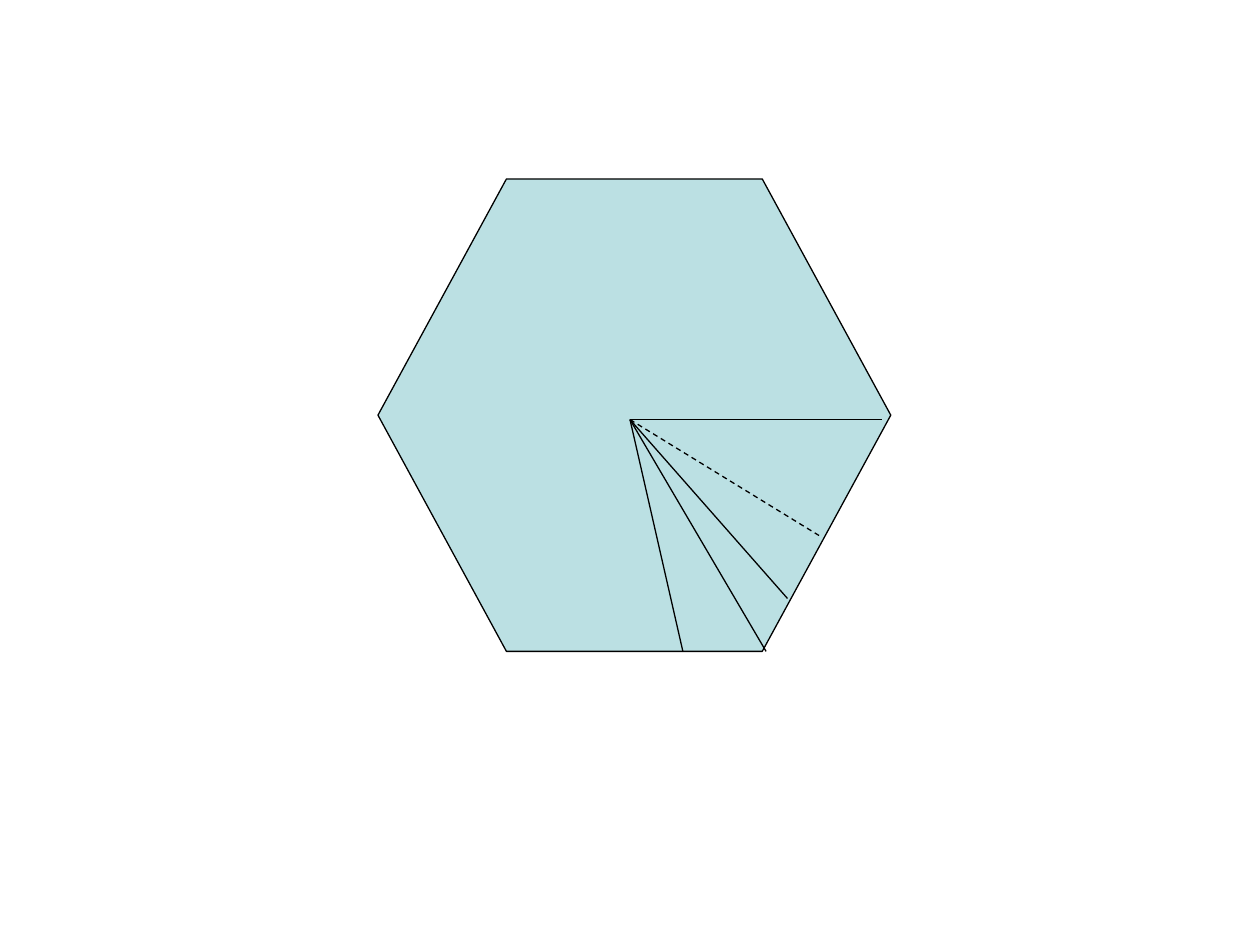
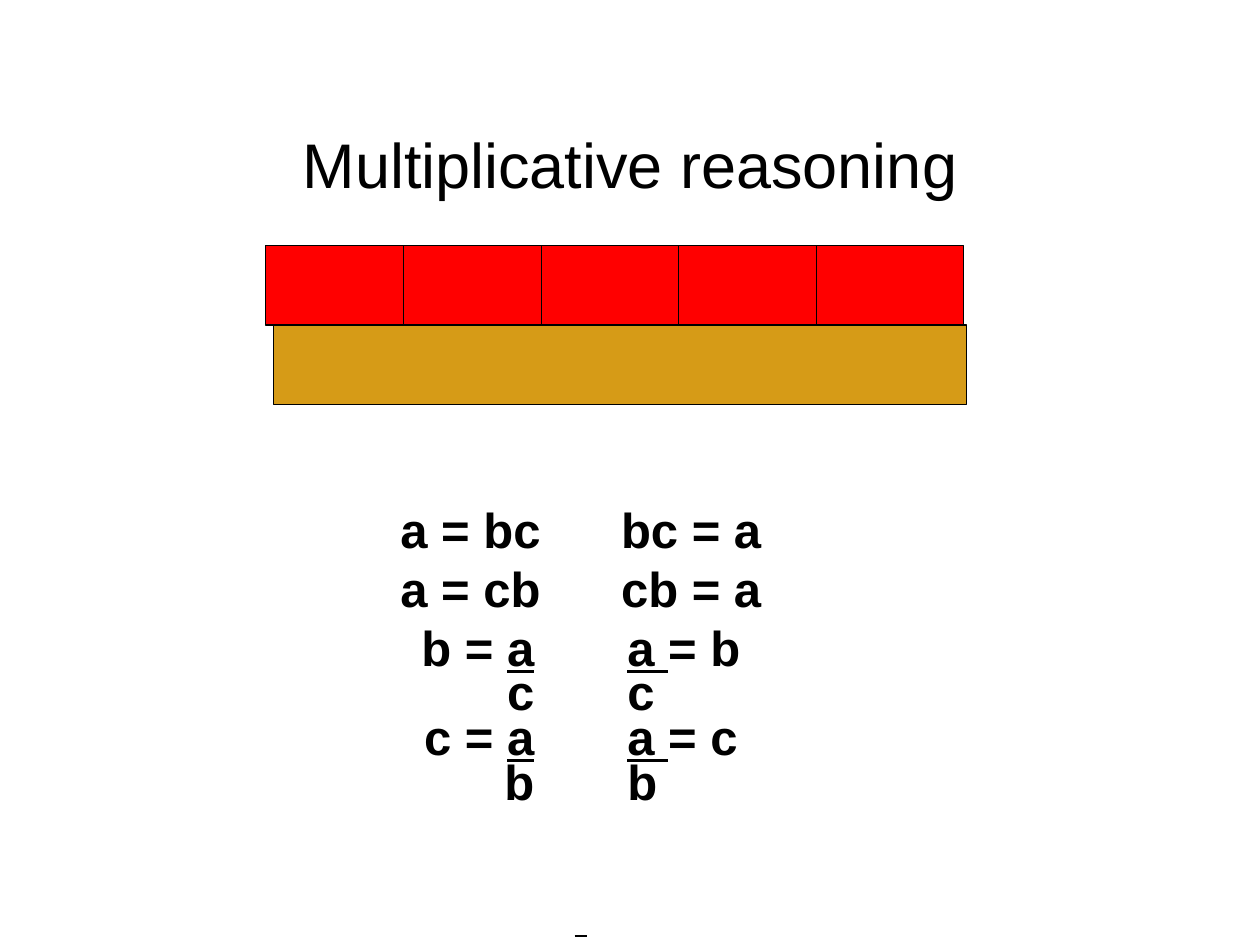
"""Build two slides: rays inside a hexagon, and multiplicative reasoning with bars."""
from dataclasses import dataclass
from typing import Optional, Sequence

import pptx
import pptx.dml.color
import pptx.enum.dml
import pptx.enum.shapes
import pptx.enum.text
import pptx.oxml.ns
import pptx.util
from lxml import etree

Inches = pptx.util.Inches
Pt = pptx.util.Pt
RGBColor = pptx.dml.color.RGBColor
Shape = pptx.enum.shapes.MSO_SHAPE
Align = pptx.enum.text.PP_ALIGN
Anchor = pptx.enum.text.MSO_ANCHOR


@dataclass(frozen=True)
class Theme:
    """Colours, font, type sizes and line weights."""
    font: str = "Arial"
    ink: str = "000000"
    pale_teal: str = "BBE0E3"
    gold: str = "D69B17"
    red: str = "FF0000"
    title_size: float = 36
    equation_size: float = 28
    outline: float = 0.75
    fraction_bar: float = 1.5
    full_pitch: float = 33.7
    tight_pitch: float = 25.5


@dataclass(frozen=True)
class Box:
    """A filled, outlined preset shape."""
    left: float
    top: float
    width: float
    height: float
    fill: str
    preset: Shape = Shape.RECTANGLE


@dataclass(frozen=True)
class Line:
    """A straight line with weight and optional dashes."""
    start: tuple[float, float]
    end: tuple[float, float]
    weight: float
    dashed: bool = False


@dataclass(frozen=True)
class EquationBlock:
    """Equations in one column; underscores enclose underlined parts."""
    left: float
    top: float
    text: str
    align: Align
    pitches: Sequence[float]


THEME = Theme()
TIGHT = THEME.tight_pitch
FULL = THEME.full_pitch

HEXAGON = Box(3, 1.42, 4.07, 3.75, THEME.pale_teal, Shape.HEXAGON)
CENTRE = (5, 3.33)
RAYS = [
    Line(CENTRE, (7, 3.33), THEME.outline),
    Line(CENTRE, (6.25, 4.75), THEME.outline),
    Line(CENTRE, (6.5, 4.25), THEME.outline, dashed=True),
    Line(CENTRE, (6.08, 5.17), THEME.outline),
    Line(CENTRE, (5.42, 5.17), THEME.outline),
]

BAR_HEIGHT = 0.63
WHOLE = Box(2.17, 2.58, 5.5, BAR_HEIGHT, THEME.gold)
PART_WIDTHS = [1.12, 1.12, 1.12, 1.12, 1.17]
PARTS = [
    Box(2.11 + 1.0925 * index, 1.95, width, BAR_HEIGHT, THEME.red)
    for index, width in enumerate(PART_WIDTHS)
]

BLOCK_WIDTH = 2
PRODUCT_TOP = 3.96
QUOTIENT_TOP = PRODUCT_TOP + 2 * FULL / 72
PRODUCT_PITCHES = (FULL, FULL)
QUOTIENT_PITCHES = (FULL, TIGHT, TIGHT, TIGHT)
EQUATIONS = [
    EquationBlock(2.29, PRODUCT_TOP, "a = bc\na = cb", Align.RIGHT, PRODUCT_PITCHES),
    EquationBlock(4.93, PRODUCT_TOP, "bc = a\ncb = a", Align.LEFT, PRODUCT_PITCHES),
    EquationBlock(2.24, QUOTIENT_TOP, "b = _a_\nc\nc = _a_\nb", Align.RIGHT, QUOTIENT_PITCHES),
    EquationBlock(4.98, QUOTIENT_TOP, "_a _= b\nc\n_a _= c\nb", Align.LEFT, QUOTIENT_PITCHES),
]
LOOSE_FRACTION_BAR = Line((4.56, 7.43), (4.66, 7.43), THEME.fraction_bar)


def write_text(frame, text: str, *, size: float, align: Align, bold: bool = False,
               anchor: Anchor = Anchor.TOP,
               pitches: Optional[Sequence[float]] = None) -> None:
    """Write lines of text, underlining the parts between underscores."""
    frame.word_wrap = True
    frame.vertical_anchor = anchor
    for index, line in enumerate(text.split("\n")):
        paragraph = frame.add_paragraph() if index else frame.paragraphs[0]
        paragraph.alignment = align
        if pitches:
            paragraph.line_spacing = Pt(pitches[index])
        for part, words in enumerate(line.split("_")):
            if not words:
                continue
            run = paragraph.add_run()
            run.text = words
            run.font.name = THEME.font
            run.font.size = Pt(size)
            run.font.bold = bold
            run.font.underline = part % 2 == 1
            run.font.color.rgb = RGBColor.from_string(THEME.ink)


def draw_box(slide, box: Box):
    """Draw a box and return its shape."""
    shape = slide.shapes.add_shape(box.preset, Inches(box.left), Inches(box.top),
                                   Inches(box.width), Inches(box.height))
    shape.shadow.inherit = False
    shape.fill.solid()
    shape.fill.fore_color.rgb = RGBColor.from_string(box.fill)
    shape.line.color.rgb = RGBColor.from_string(THEME.ink)
    shape.line.width = Pt(THEME.outline)
    return shape


def draw_line(slide, line: Line) -> None:
    """Draw a straight line without a shadow."""
    connector = slide.shapes.add_connector(
        pptx.enum.shapes.MSO_CONNECTOR.STRAIGHT,
        *(Inches(value) for value in line.start + line.end))
    connector.line.color.rgb = RGBColor.from_string(THEME.ink)
    connector.line.width = Pt(line.weight)
    if line.dashed:
        connector.line.dash_style = pptx.enum.dml.MSO_LINE.DASH
    etree.SubElement(connector._element.spPr, pptx.oxml.ns.qn("a:effectLst"))


def draw_equations(slide, block: EquationBlock) -> None:
    """Draw one column of equations."""
    frame = slide.shapes.add_textbox(
        Inches(block.left), Inches(block.top), Inches(BLOCK_WIDTH),
        Inches(sum(block.pitches) / 72)).text_frame
    frame.margin_left = frame.margin_right = frame.margin_top = frame.margin_bottom = 0
    write_text(frame, block.text, size=THEME.equation_size, bold=True,
               align=block.align, pitches=block.pitches)


def build_hexagon_slide(deck) -> None:
    """Draw the hexagon and the rays from its centre."""
    slide = deck.slides.add_slide(deck.slide_layouts.get_by_name("Blank"))
    hexagon = draw_box(slide, HEXAGON)
    hexagon.adjustments[0] = 0.272
    for ray in RAYS:
        draw_line(slide, ray)


def build_reasoning_slide(deck) -> None:
    """Draw the title, the bars and the equations."""
    slide = deck.slides.add_slide(deck.slide_layouts.get_by_name("Title Only"))
    heading = slide.shapes.title
    heading.left, heading.top = Inches(0.75), Inches(0.67)
    heading.width, heading.height = Inches(8.5), Inches(1.25)
    write_text(heading.text_frame, "Multiplicative reasoning", size=THEME.title_size,
               align=Align.CENTER, anchor=Anchor.MIDDLE)
    for bar in [WHOLE, *PARTS]:
        draw_box(slide, bar)
    for block in EQUATIONS:
        draw_equations(slide, block)
    draw_line(slide, LOOSE_FRACTION_BAR)


def main() -> None:
    """Build and save the presentation."""
    deck = pptx.Presentation()
    deck.slide_width, deck.slide_height = Inches(10), Inches(7.5)
    build_hexagon_slide(deck)
    build_reasoning_slide(deck)
    deck.save("out.pptx")


if __name__ == "__main__":
    main()
